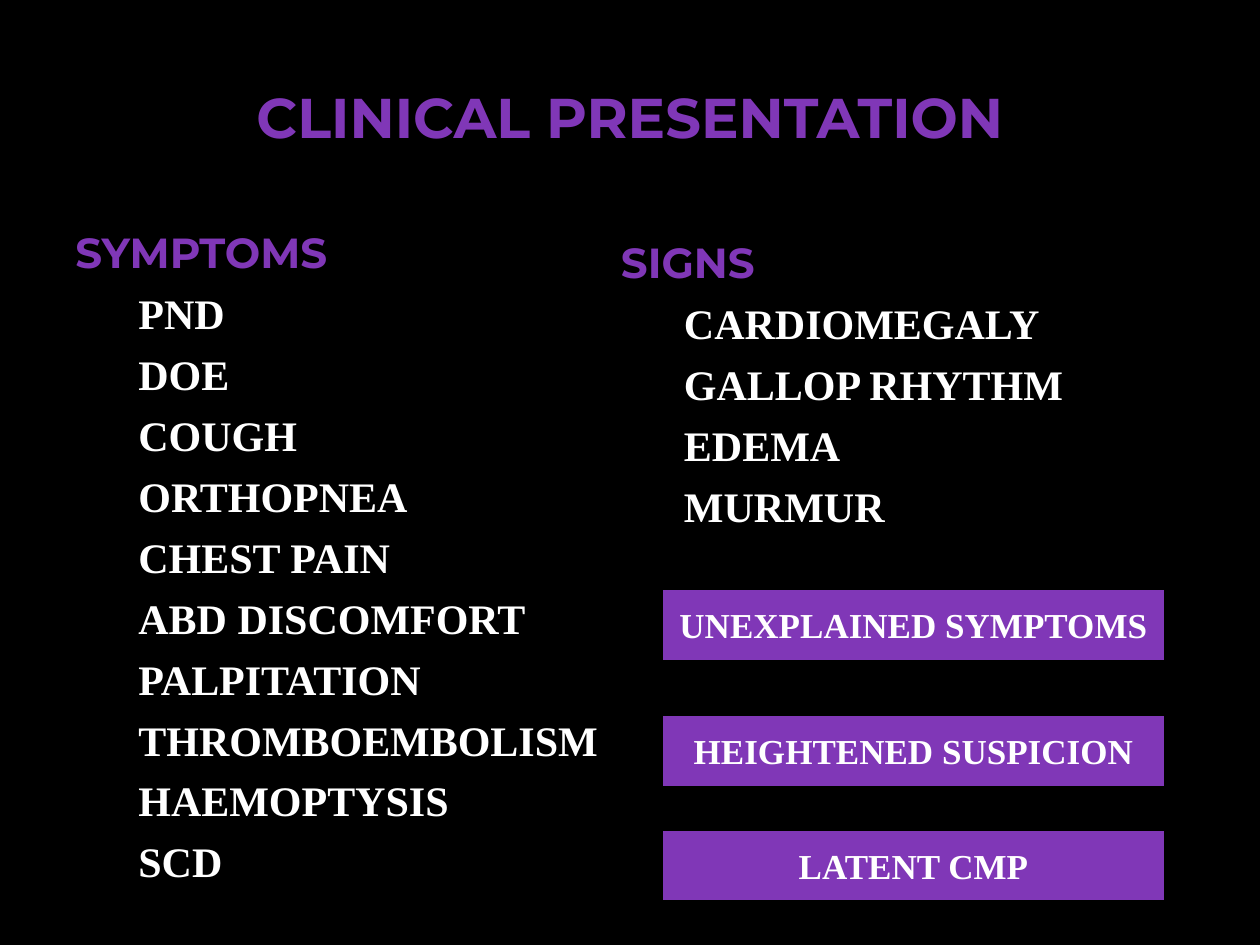
import pptx
import pptx.dml.color
import pptx.enum.shapes
import pptx.enum.text
import pptx.util

Inches, Pt = pptx.util.Inches, pptx.util.Pt
PP_ALIGN, MSO_ANCHOR = pptx.enum.text.PP_ALIGN, pptx.enum.text.MSO_ANCHOR
PURPLE, WHITE, BLACK = "8037B7", "FFFFFF", "000000"
HEAD, BODY = "Montserrat", "Times New Roman"


def rgb(value):
    return pptx.dml.color.RGBColor.from_string(value)


def style(p, font, size, color):
    """Format every run of a paragraph in bold."""
    for r in p.runs:
        r.font.name, r.font.size, r.font.bold = font, Pt(size), True
        r.font.color.rgb = rgb(color)


prs = pptx.Presentation()
prs.slide_width, prs.slide_height = Inches(10), Inches(7.5)
s = prs.slides.add_slide(prs.slide_layouts[6])
s.background.fill.solid()
s.background.fill.fore_color.rgb = rgb(BLACK)

# Title
margin = prs.slide_width * 0.05
title = s.shapes.add_textbox(
    int(margin), Inches(0.3), int(prs.slide_width - 2 * margin), Inches(1.25))
tf = title.text_frame
tf.word_wrap = True
tf.vertical_anchor = MSO_ANCHOR.MIDDLE
tf.text = "CLINICAL PRESENTATION"
tf.paragraphs[0].alignment = PP_ALIGN.CENTER
style(tf.paragraphs[0], HEAD, 32, PURPLE)

# Two lists, each a heading with indented items
lists = [
    ((0.5, 1.75, 4.42, 5.33), "SYMPTOMS",
     ["PND", "DOE", "COUGH", "ORTHOPNEA", "CHEST PAIN", "ABD DISCOMFORT",
      "PALPITATION", "THROMBOEMBOLISM", "HAEMOPTYSIS", "SCD"]),
    ((4.83, 1.83, 4.75, 4.95), "SIGNS",
     ["CARDIOMEGALY", "GALLOP RHYTHM", "EDEMA", "MURMUR"]),
]
for box, heading, items in lists:
    tf = s.shapes.add_textbox(*map(Inches, box)).text_frame
    tf.word_wrap = True
    tf.text = heading
    style(tf.paragraphs[0], HEAD, 24, PURPLE)
    for item in items:
        p = tf.add_paragraph()
        p.text = item
        p.level = 1
        p.space_before = Pt(6)
        pPr = p._p.get_or_add_pPr()
        pPr.set("marL", str(Inches(0.81)))
        pPr.set("indent", str(Inches(-0.31)))
        style(p, BODY, 24, WHITE)

# Purple boxes under the signs
for top, label in [(4.67, "UNEXPLAINED SYMPTOMS"),
                   (5.67, "HEIGHTENED SUSPICION"),
                   (6.58, "LATENT CMP")]:
    sp = s.shapes.add_shape(
        pptx.enum.shapes.MSO_SHAPE.RECTANGLE,
        Inches(5.25), Inches(top), Inches(4), Inches(0.58))
    sp.shadow.inherit = False
    sp.fill.solid()
    sp.fill.fore_color.rgb = rgb(PURPLE)
    sp.line.color.rgb = rgb(BLACK)
    sp.line.width = Pt(2)
    tf = sp.text_frame
    tf.vertical_anchor = MSO_ANCHOR.MIDDLE
    tf.text = label
    tf.paragraphs[0].alignment = PP_ALIGN.CENTER
    style(tf.paragraphs[0], BODY, 20, WHITE)

prs.save("out.pptx")
